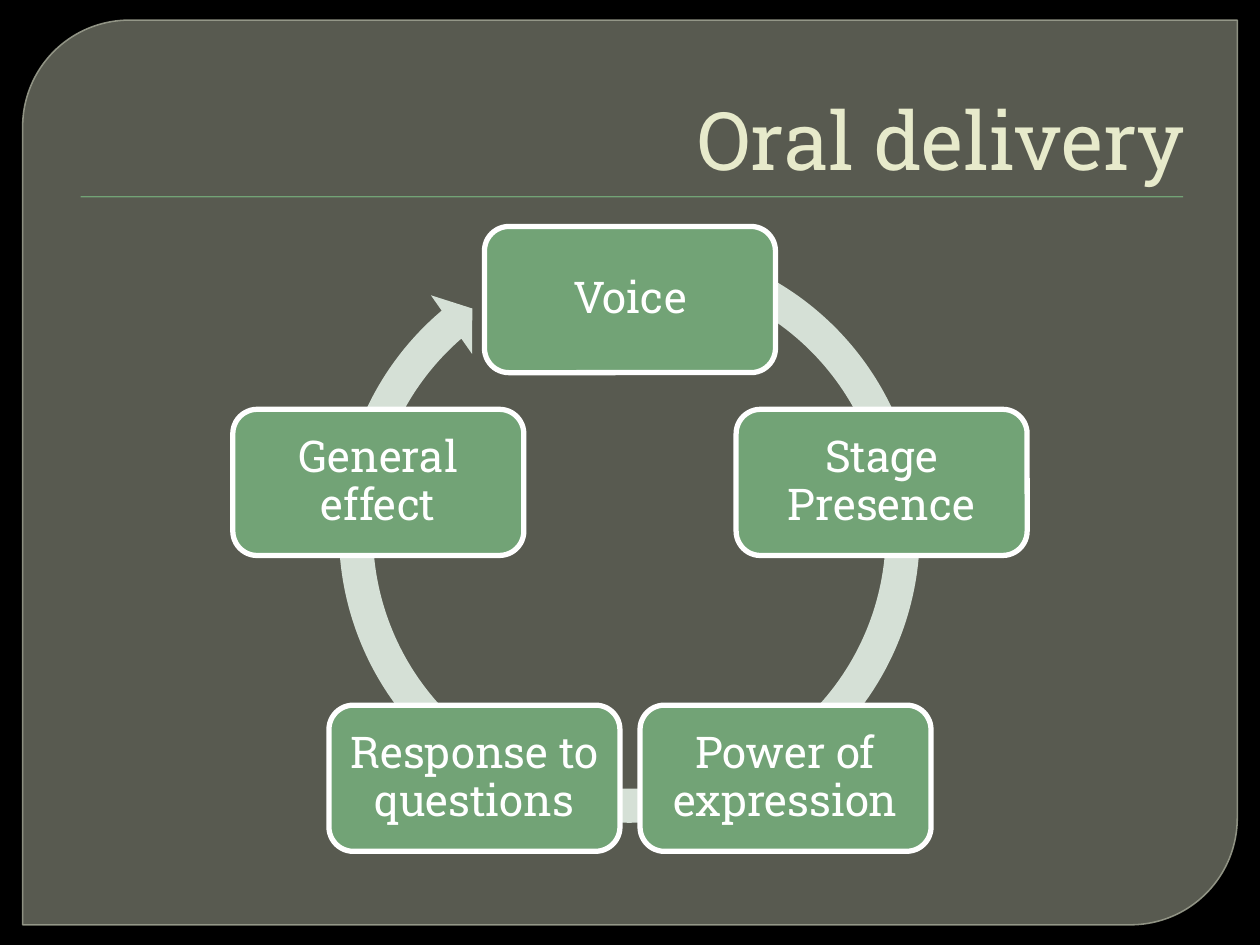
import math
from lxml import etree
from pptx import Presentation
from pptx import util as u
from pptx.dml.color import RGBColor
from pptx.enum import shapes, text
from pptx.oxml import ns

COLORS = {
    "background": "000000", "panel": "888B7B", "panel edge": "9DA090",
    "green": "72A376", "ring": "D5E0D6", "title": "E7EACB", "white": "FFFFFF",
}
FONT = "Roboto Slab"

prs = Presentation()
prs.slide_width, prs.slide_height = u.Inches(10), u.Inches(7.5)
W, H = prs.slide_width, prs.slide_height
slide = prs.slides.add_slide(prs.slide_layouts[5])
slide.background.fill.solid()
slide.background.fill.fore_color.rgb = RGBColor.from_string(COLORS["background"])


def add_block(kind, box, fill, edge=None, edge_width=0):
    """Add a flat preset shape; box is left, top, width, height in EMU."""
    block = slide.shapes.add_shape(kind, *(round(length) for length in box))
    block.shadow.inherit = False
    block.fill.solid()
    block.fill.fore_color.rgb = RGBColor.from_string(COLORS[fill])
    if edge:
        block.line.color.rgb = RGBColor.from_string(COLORS[edge])
        block.line.width = u.Pt(edge_width)
    else:
        block.line.fill.background()
    return block


def style_text(frame, size, color, align, anchor):
    """Format the single paragraph of a text frame."""
    frame.word_wrap = True
    frame.vertical_anchor = anchor
    paragraph = frame.paragraphs[0]
    paragraph.alignment = align
    font = paragraph.runs[0].font
    font.name, font.size = FONT, u.Pt(size)
    font.color.rgb = RGBColor.from_string(COLORS[color])
    return paragraph


# Translucent panel with two rounded corners
panel = add_block(shapes.MSO_SHAPE.ROUND_2_DIAG_RECTANGLE,
                  (0.018 * W, 0.0213 * H, 0.964 * W, 0.9573 * H),
                  "panel", "panel edge", 0.87)
panel.adjustments[0], panel.adjustments[1] = 0.118, 0
for color, opacity in zip(panel.element.spPr.iter(ns.qn("a:srgbClr")), (65, 88)):
    etree.SubElement(color, ns.qn("a:alpha"), val=str(opacity * 1000))

# Title above a thin rule
rule = add_block(shapes.MSO_SHAPE.RECTANGLE,
                 (0.064 * W, 0.2075 * H, 0.875 * W, 0.0013 * H), "green")
title = slide.shapes.title
title.left, title.top = round(0.05 * W), round(0.0373 * H)
title.width, title.height = round(0.9 * W), round(0.1667 * H)
title.text_frame.text = "Oral delivery"
style_text(title.text_frame, 46, "title", text.PP_ALIGN.RIGHT, text.MSO_ANCHOR.BOTTOM)
rule.element.addnext(title.element)

# Circular arrow behind the steps
ring_size = 0.491 * W
ring = add_block(shapes.MSO_SHAPE.CIRCULAR_ARROW,
                 (0.254 * W, 0.236 * H, ring_size, ring_size), "ring")
for index, value in enumerate((0.055, 3.307, 137.657, 173.922, 0.058)):
    ring.adjustments[index] = value

# Five steps, evenly spaced clockwise from the top
steps = ["Voice", "Stage Presence", "Power of expression",
         "Response to questions", "General effect"]
center_x, center_y, radius = 0.5 * W, 0.597 * H, 0.21 * W
step_width, step_height = 0.231 * W, 0.1547 * H
for index, label in enumerate(steps):
    angle = 2 * math.pi * index / len(steps)
    step = add_block(shapes.MSO_SHAPE.ROUNDED_RECTANGLE,
                     (center_x + radius * math.sin(angle) - step_width / 2,
                      center_y - radius * math.cos(angle) - step_height / 2,
                      step_width, step_height), "green", "white", 3)
    frame = step.text_frame
    frame.margin_left = frame.margin_right = u.Inches(0.05)
    frame.text = label
    paragraph = style_text(frame, 25, "white", text.PP_ALIGN.CENTER, text.MSO_ANCHOR.MIDDLE)
    paragraph.line_spacing = 0.9

prs.save("out.pptx")
